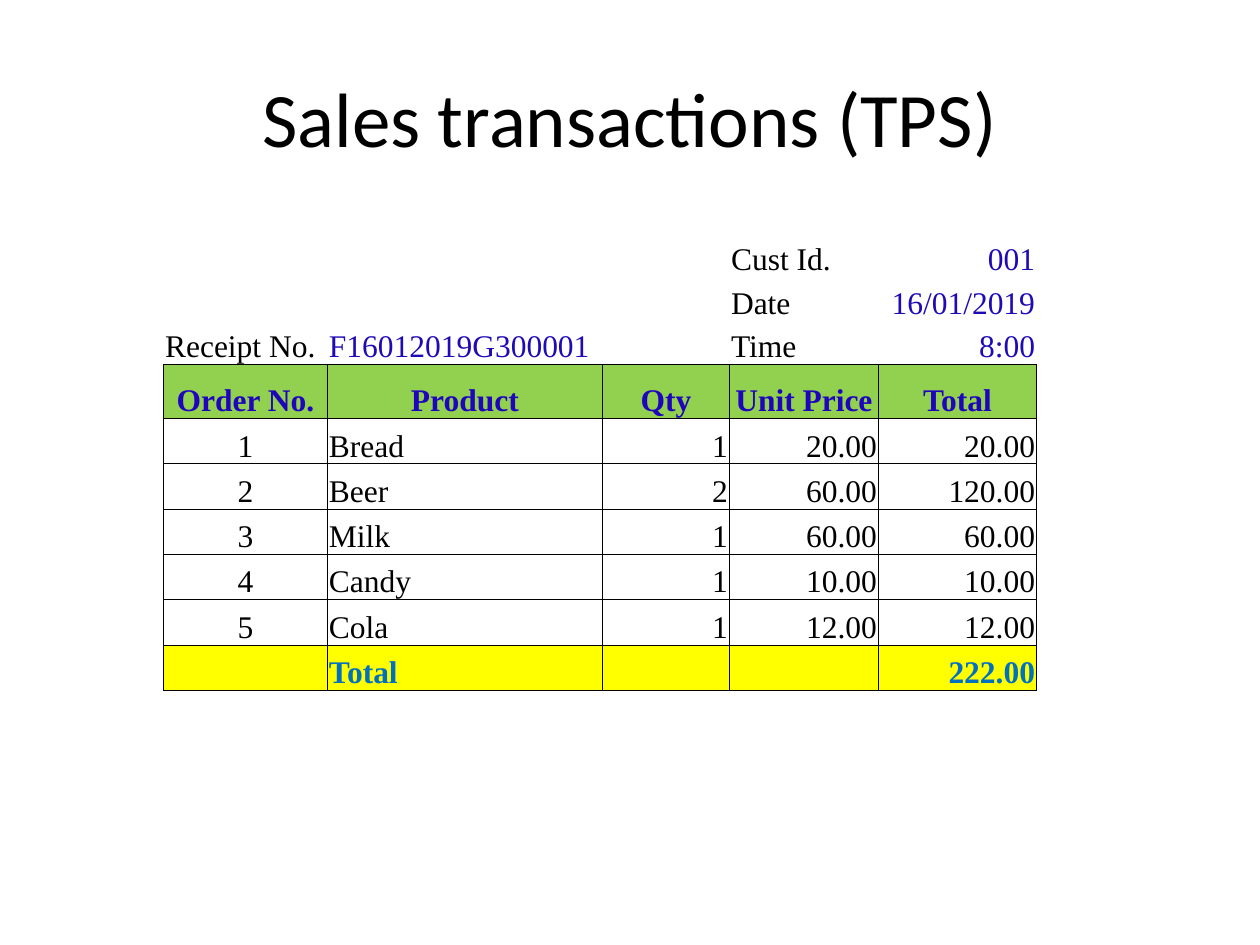
from lxml import etree
from pptx import Presentation
from pptx.dml.color import RGBColor
from pptx.enum.text import MSO_ANCHOR, PP_ALIGN
from pptx.oxml.ns import qn
from pptx.util import Pt

LEFT, MID, RIGHT = PP_ALIGN.LEFT, PP_ALIGN.CENTER, PP_ALIGN.RIGHT
LOW, HALF = MSO_ANCHOR.BOTTOM, MSO_ANCHOR.MIDDLE
HEX = {"ink": "000000", "blue": "1F0BB5", "head": "1E04BC",
       "sum": "0070C0", "green": "92D050", "gold": "FFFF00"}

# Receipt content
INFO = [["", "", "", "Cust Id.", "001"],
        ["", "", "", "Date", "16/01/2019"],
        ["Receipt No.", "F16012019G300001", "", "Time", "8:00"]]
HEADS = ["Order No.", "Product", "Qty", "Unit Price", "Total"]
ITEMS = [["1", "Bread", "1", "20.00", "20.00"],
         ["2", "Beer", "2", "60.00", "120.00"],
         ["3", "Milk", "1", "60.00", "60.00"],
         ["4", "Candy", "1", "10.00", "10.00"],
         ["5", "Cola", "1", "12.00", "12.00"]]
TOTAL = ["", "Total", "", "", "222.00"]

# Looks of each kind of row: height, colour and alignment by column
INFO_LOOK = {"high": 24.8, "inks": ["ink", "blue", "ink", "ink", "blue"],
             "ways": [LEFT, LEFT, LEFT, LEFT, RIGHT], "edges": ""}
LAST_LOOK = {**INFO_LOOK, "edges": "B"}
HEAD_LOOK = {"high": 30.9, "inks": ["head"] * 5, "ways": [MID] * 5,
             "edges": "LRTB", "fill": "green", "bold": True}
ITEM_LOOK = {"high": 25.9, "inks": ["ink"] * 5,
             "ways": [MID, LEFT, RIGHT, RIGHT, RIGHT], "edges": "LRTB"}
SUM_LOOK = {**ITEM_LOOK, "inks": ["sum"] * 5, "fill": "gold", "bold": True}


class Deck:
    cell_form = {"margin_left": Pt(0.9), "margin_right": Pt(0.9),
                 "margin_top": Pt(0.9), "margin_bottom": 0,
                 "vertical_anchor": LOW}

    def __init__(self, wide, high):
        self.prs = Presentation()
        self.prs.slide_width, self.prs.slide_height = Pt(wide), Pt(high)
        self.slide = self.prs.slides.add_slide(self.prs.slide_layouts[5])

    def apply(self, item, form):
        for name, value in form.items():
            setattr(item, name, value)

    def label(self, frame, text, face, size, ink, way, bold=False):
        para = frame.paragraphs[0]
        para.alignment = way
        run = para.add_run()
        run.text = text
        self.apply(run.font, {"name": face, "size": Pt(size), "bold": bold})
        run.font.color.rgb = RGBColor.from_string(HEX[ink])

    def title(self, text, left, top, wide, high):
        box = self.slide.shapes.title
        self.apply(box, {"left": Pt(left), "top": Pt(top),
                         "width": Pt(wide), "height": Pt(high)})
        box.text_frame.vertical_anchor = HALF
        self.label(box.text_frame, text, "Calibri", 44, "ink", MID)

    def border(self, cell, edges):
        props = cell._tc.get_or_add_tcPr()
        for side in "LRTB":
            line = etree.SubElement(props, qn("a:ln" + side), w=str(Pt(0.5)))
            if side in edges:
                fill = etree.SubElement(line, qn("a:solidFill"))
                etree.SubElement(fill, qn("a:srgbClr"), val=HEX["ink"])
            else:
                etree.SubElement(line, qn("a:noFill"))

    def cell(self, cell, text, look, col):
        self.apply(cell, self.cell_form)
        self.border(cell, look["edges"])
        if "fill" in look:
            cell.fill.solid()
            cell.fill.fore_color.rgb = RGBColor.from_string(HEX[look["fill"]])
        else:
            cell.fill.background()
        if text:
            self.label(cell.text_frame, text, "Times New Roman", 18,
                       look["inks"][col], look["ways"][col],
                       look.get("bold", False))

    def table(self, left, top, cols, rows):
        high = sum(look["high"] for _, look in rows)
        grid = self.slide.shapes.add_table(
            len(rows), len(cols), Pt(left), Pt(top), Pt(sum(cols)), Pt(high)).table
        self.apply(grid, {"first_row": False, "horz_banding": False})
        for col, wide in zip(grid.columns, cols):
            col.width = Pt(wide)
        for r, (texts, look) in enumerate(rows):
            grid.rows[r].height = Pt(look["high"])
            for c, text in enumerate(texts):
                self.cell(grid.cell(r, c), text, look, c)


def main():
    deck = Deck(720, 540)
    deck.title("Sales transactions (TPS)", 36, 21.6, 648, 90)

    # Receipt: details, headings, items and total
    rows = [(texts, INFO_LOOK) for texts in INFO[:-1]]
    rows += [(INFO[-1], LAST_LOOK), (HEADS, HEAD_LOOK)]
    rows += [(texts, ITEM_LOOK) for texts in ITEMS]
    rows.append((TOTAL, SUM_LOOK))
    deck.table(93.5, 133.9, [93.6, 157.2, 72.6, 85.1, 90.4], rows)
    deck.prs.save("out.pptx")


if __name__ == "__main__":
    main()
